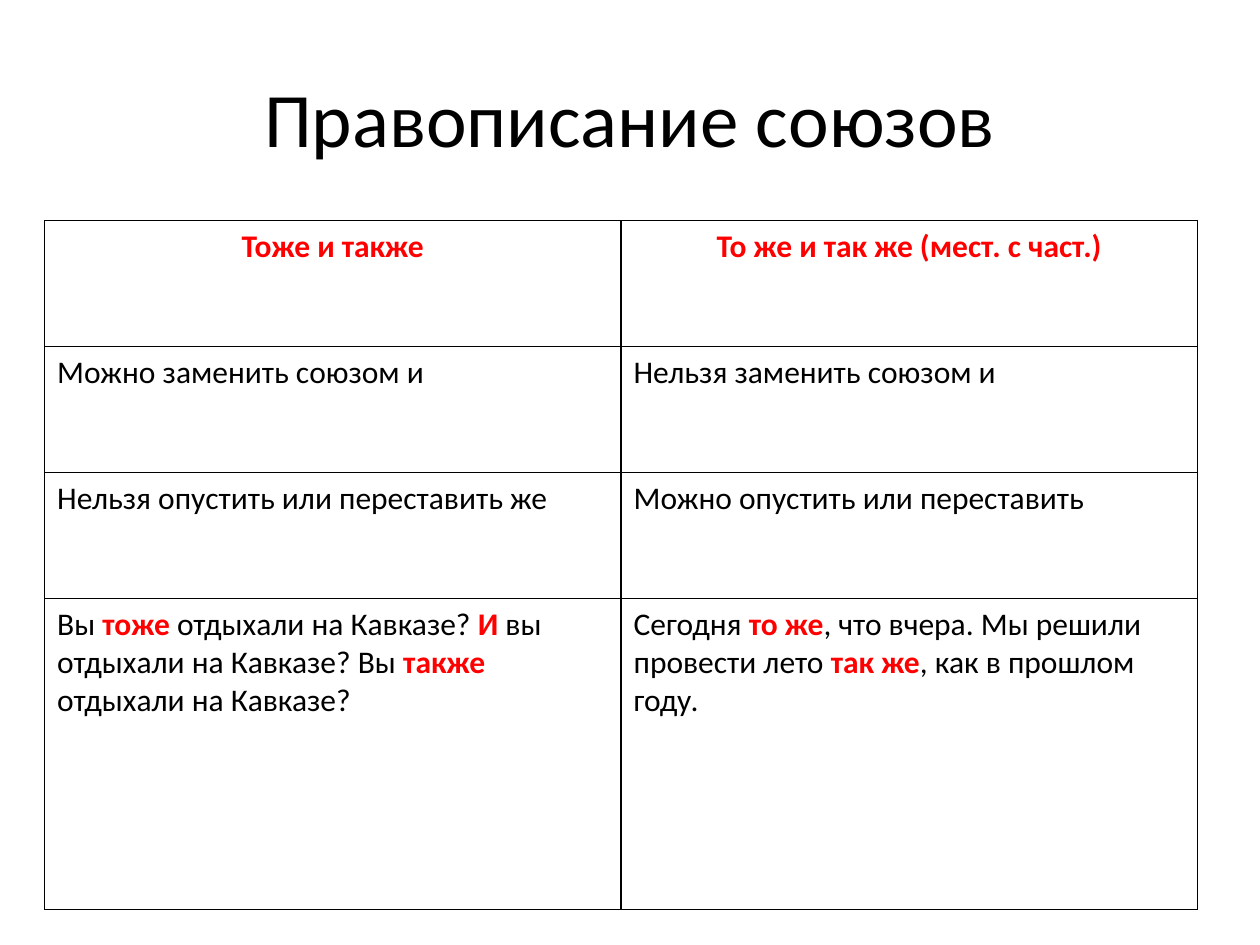
from pptx import Presentation
from pptx.dml.color import RGBColor
from pptx.enum.text import MSO_ANCHOR, PP_ALIGN
from pptx.oxml.ns import qn
from pptx.util import Cm, Pt
from lxml.etree import SubElement

BLACK = RGBColor(0x00, 0x00, 0x00)
RED = RGBColor(0xFF, 0x00, 0x00)
FONT = "Calibri"


def add_text(paragraph, text, size=18, color=BLACK, bold=False):
    run = paragraph.add_run()
    run.text = text
    run.font.name = FONT
    run.font.size = Pt(size)
    run.font.bold = bold
    run.font.color.rgb = color


def add_borders(cell, color=BLACK, width=Pt(1)):
    properties = cell._tc.get_or_add_tcPr()
    for index, side in enumerate(("a:lnL", "a:lnR", "a:lnT", "a:lnB")):
        line = properties.makeelement(qn(side), {"w": str(width)})
        fill = SubElement(line, qn("a:solidFill"))
        SubElement(fill, qn("a:srgbClr"), val=str(color))
        properties.insert(index, line)


presentation = Presentation()
presentation.slide_width = Cm(25.4)
presentation.slide_height = Cm(19.05)
slide = presentation.slides.add_slide(presentation.slide_layouts[5])

title = slide.shapes.title
title.left, title.top, title.width, title.height = Cm(1.27), Cm(0.76), Cm(22.86), Cm(3.18)
title.text_frame.vertical_anchor = MSO_ANCHOR.MIDDLE
title_paragraph = title.text_frame.paragraphs[0]
title_paragraph.alignment = PP_ALIGN.CENTER
add_text(title_paragraph, "Правописание союзов", size=44)

# Each cell is a list of (text, highlighted) pieces
rows = [
    [[("Тоже и также", True)], [("То же и так же (мест. с част.)", True)]],
    [[("Можно заменить союзом и", False)], [("Нельзя заменить союзом и", False)]],
    [[("Нельзя опустить или переставить же", False)], [("Можно опустить или переставить", False)]],
    [
        [
            ("Вы ", False),
            ("тоже", True),
            (" отдыхали на Кавказе? ", False),
            ("И", True),
            (" вы отдыхали на Кавказе? Вы ", False),
            ("также ", True),
            ("отдыхали на Кавказе?", False),
        ],
        [
            ("Сегодня ", False),
            ("то же", True),
            (", что вчера. Мы решили провести лето ", False),
            ("так же", True),
            (", как в прошлом году.", False),
        ],
    ],
]
row_heights = [Cm(2.54)] * 3 + [Cm(6.26)]

table = slide.shapes.add_table(
    len(rows), 2, Cm(0.9), Cm(4.45), Cm(23.24), sum(row_heights)
).table
table.first_row = False
table.horz_banding = False

for row_index, (row, height) in enumerate(zip(rows, row_heights)):
    table.rows[row_index].height = height
    for column_index, pieces in enumerate(row):
        cell = table.cell(row_index, column_index)
        cell.fill.background()
        add_borders(cell)
        paragraph = cell.text_frame.paragraphs[0]
        paragraph.alignment = PP_ALIGN.CENTER if row_index == 0 else PP_ALIGN.LEFT
        for text, highlighted in pieces:
            add_text(paragraph, text, color=RED if highlighted else BLACK, bold=highlighted)

presentation.save("out.pptx")
